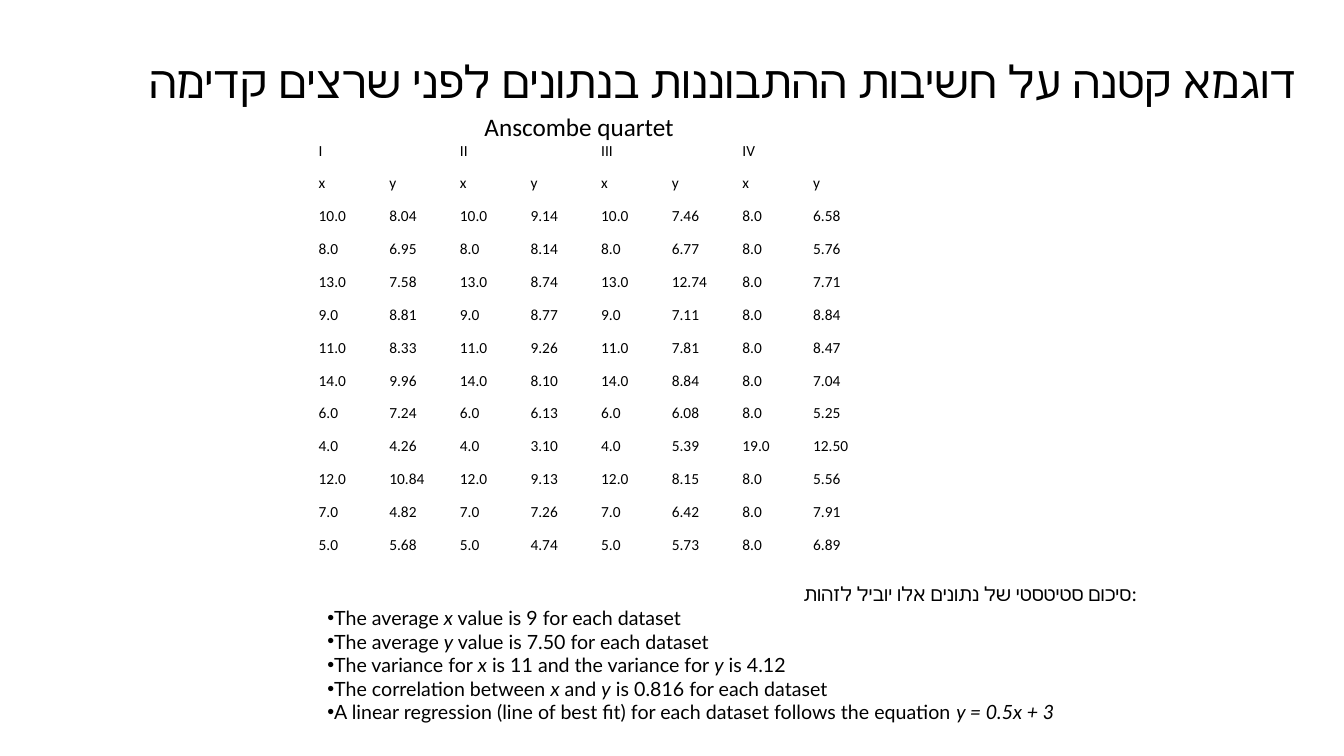
import pptx
import pptx.dml.color
import pptx.enum.text
import pptx.oxml
import pptx.util

Cm = pptx.util.Cm
Pt = pptx.util.Pt
ALIGN = pptx.enum.text.PP_ALIGN
ANCHOR = pptx.enum.text.MSO_ANCHOR

COLORS = {"ink": "000000", "paper": "FFFFFF"}
NS = 'xmlns:a="http://schemas.openxmlformats.org/drawingml/2006/main"'

TITLE = "דוגמא קטנה על חשיבות ההתבוננות בנתונים לפני שרצים קדימה"
INTRO = "סיכום סטיטסטי של נתונים אלו יוביל לזהות:"

# Asterisks enclose italic text
FACTS = [
    "The average *x* value is 9 for each dataset",
    "The average *y* value is 7.50 for each dataset",
    "The variance for *x* is 11 and the variance for *y* is 4.12",
    "The correlation between *x* and *y* is 0.816 for each dataset",
    "A linear regression (line of best fit) for each dataset "
    "follows the equation *y = 0.5x + 3*",
]

SETS = ["I", "II", "III", "IV"]
# Shared x of sets I to III, their y values, then x and y of set IV
DATA = """
10.0 8.04 9.14 7.46 8.0 6.58
8.0 6.95 8.14 6.77 8.0 5.76
13.0 7.58 8.74 12.74 8.0 7.71
9.0 8.81 8.77 7.11 8.0 8.84
11.0 8.33 9.26 7.81 8.0 8.47
14.0 9.96 8.10 8.84 8.0 7.04
6.0 7.24 6.13 6.08 8.0 5.25
4.0 4.26 3.10 5.39 19.0 12.50
12.0 10.84 9.13 8.15 8.0 5.56
7.0 4.82 7.26 6.42 8.0 7.91
5.0 5.68 4.74 5.73 8.0 6.89
"""


def color(name):
    return pptx.dml.color.RGBColor.from_string(COLORS[name])


def style(para, size, face="Calibri"):
    for run in para.runs:
        run.font.size = Pt(size)
        run.font.name = face
        run.font.color.rgb = color("ink")


def add_box(slide, left, top, width, height):
    box = slide.shapes.add_textbox(Cm(left), Cm(top), Cm(width), Cm(height))
    frame = box.text_frame
    frame.word_wrap = True
    return frame


def add_line(slide, place, text, size, align=ALIGN.LEFT, anchor=ANCHOR.TOP):
    frame = add_box(slide, *place)
    frame.text = text
    frame.vertical_anchor = anchor
    para = frame.paragraphs[0]
    para.alignment = align
    style(para, size)


def add_fact(frame, text):
    """Add a bullet whose parts between asterisks are italic."""
    para = frame.add_paragraph()
    props = para._p.get_or_add_pPr()
    props.set("marL", "0")
    props.set("indent", "0")
    props.append(pptx.oxml.parse_xml(f'<a:buFont {NS} typeface="Arial"/>'))
    props.append(pptx.oxml.parse_xml(f'<a:buChar {NS} char="•"/>'))
    for i, part in enumerate(text.split("*")):
        if part:
            run = para.add_run()
            run.text = part
            run.font.italic = i % 2 == 1
    style(para, 14, "Lato")


def add_facts(slide):
    frame = add_box(slide, 8, 14.55, 20.9, 3.84)
    frame.text = INTRO
    intro = frame.paragraphs[0]
    intro.alignment = ALIGN.RIGHT
    style(intro, 14, "Lato")
    for fact in FACTS:
        add_fact(frame, fact)


def make_rows():
    rows = [[text for name in SETS for text in (name, "")], ["x", "y"] * 4]
    for line in DATA.strip().splitlines():
        x, one, two, three, *four = line.split()
        rows.append([x, one, x, two, x, three, *four])
    return rows


def fill_cell(cell, text):
    cell.text = text
    cell.vertical_anchor = ANCHOR.MIDDLE
    cell.margin_left = cell.margin_right = Cm(0.28)
    cell.margin_top = cell.margin_bottom = Cm(0.18)
    cell.fill.solid()
    cell.fill.fore_color.rgb = color("paper")
    para = cell.text_frame.paragraphs[0]
    para.font.size = Pt(11)
    style(para, 11)


def add_grid(slide):
    rows = make_rows()
    high, wide = len(rows), len(rows[0])
    shape = slide.shapes.add_table(
        high, wide, Cm(7.75), Cm(3.38), Cm(14.24), Cm(10.77))
    grid = shape.table
    grid.first_row = grid.horz_banding = False
    for r, row in enumerate(rows):
        for c, text in enumerate(row):
            fill_cell(grid.cell(r, c), text)
    for c in range(0, wide, 2):
        grid.cell(0, c).merge(grid.cell(0, c + 1))


def main():
    deck = pptx.Presentation()
    deck.slide_width, deck.slide_height = Cm(33.87), Cm(19.05)
    slide = deck.slides.add_slide(deck.slide_layouts[6])
    add_line(slide, (1.4, 0.66, 31.55, 2.72), TITLE, 32,
             ALIGN.RIGHT, ANCHOR.MIDDLE)
    add_grid(slide)
    add_facts(slide)
    add_line(slide, (11.96, 2.67, 16.94, 1.02), "Anscombe quartet", 18)
    deck.save("out.pptx")


if __name__ == "__main__":
    main()
